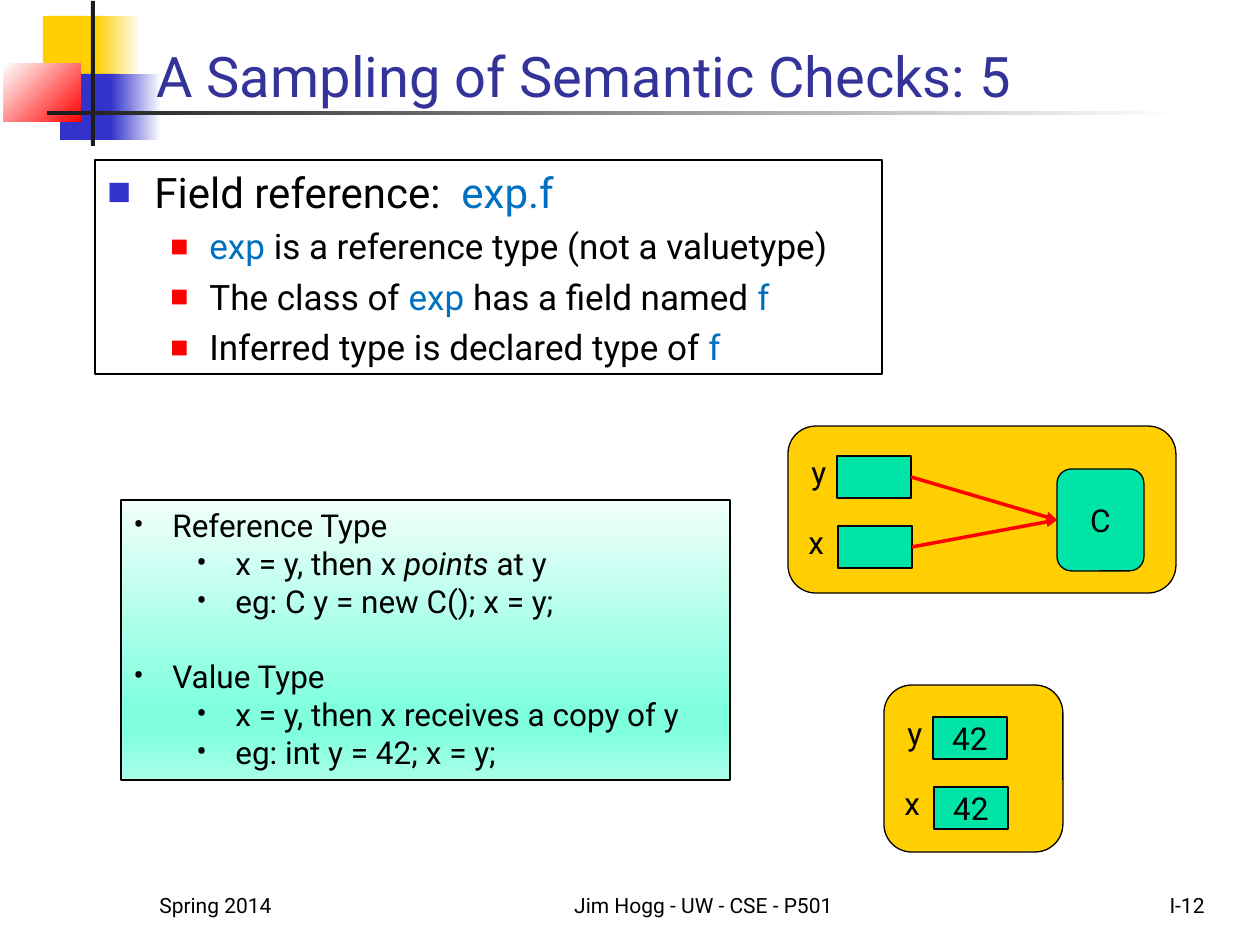
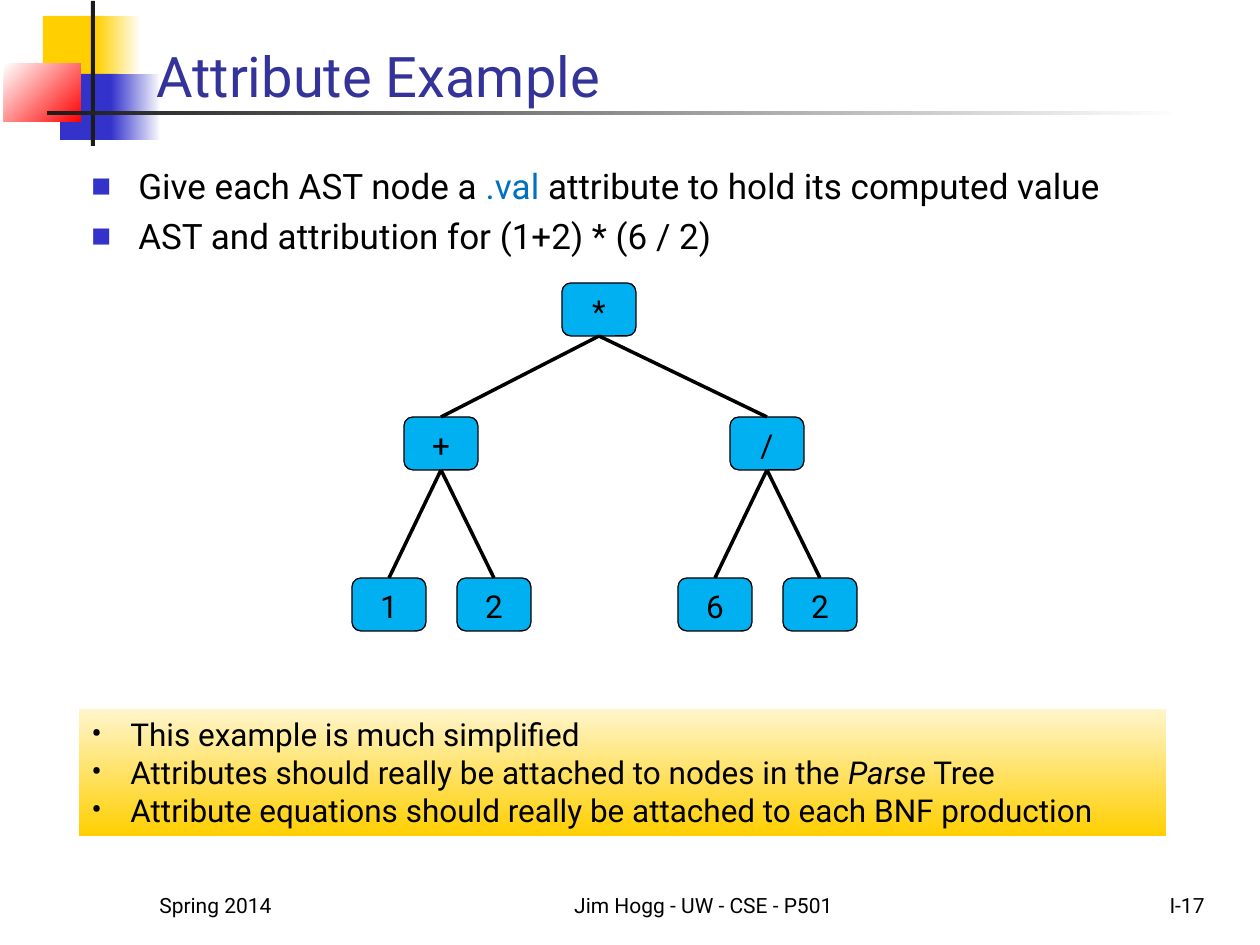
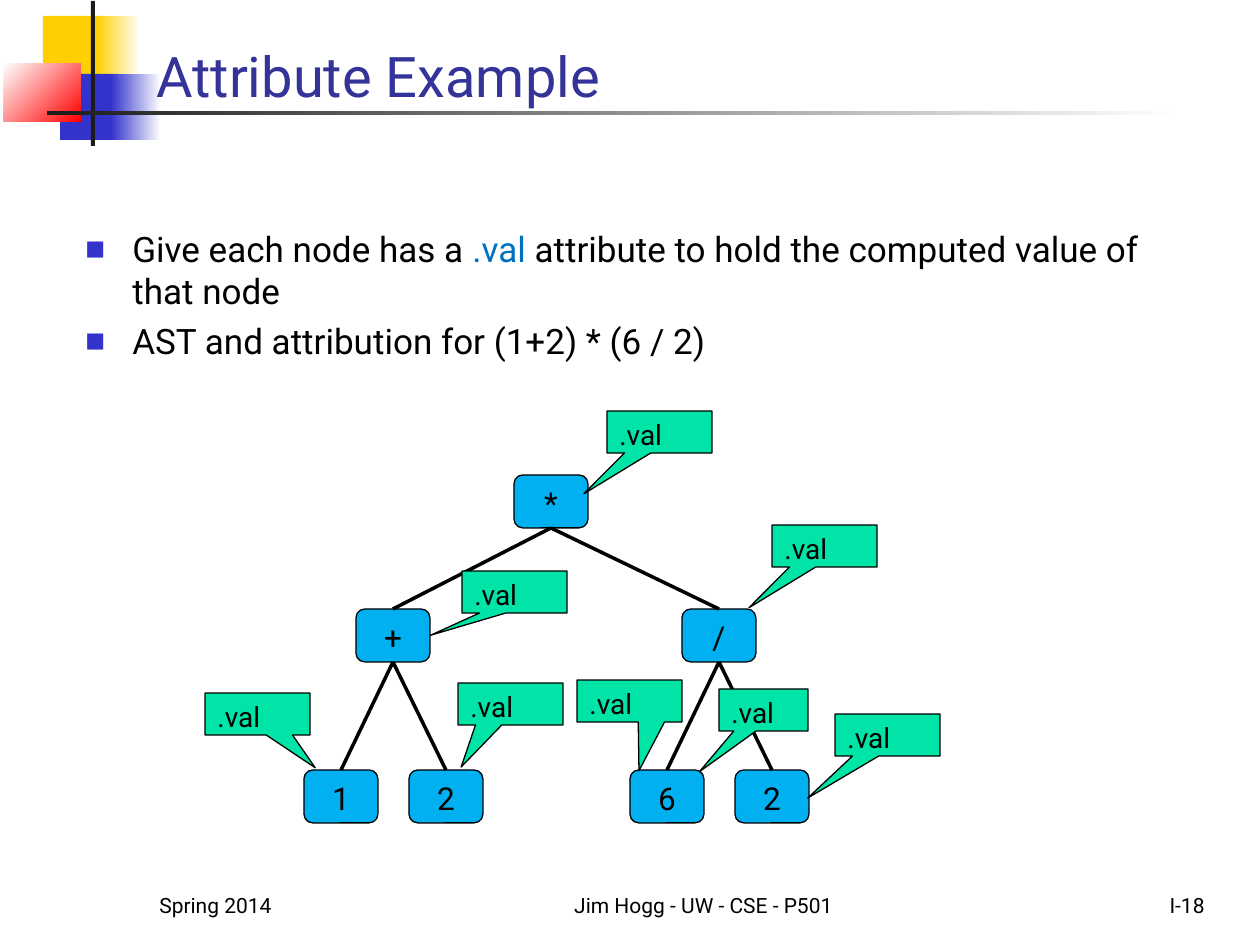
import pptx
import pptx.util
import pptx.dml.color
import pptx.enum.shapes
import pptx.enum.text
import pptx.oxml.ns
import lxml.etree

RGB = pptx.dml.color.RGBColor
BLACK = RGB(0x00, 0x00, 0x00)
WHITE = RGB(0xFF, 0xFF, 0xFF)
INK = RGB(0x1C, 0x1C, 0x1C)
GOLD = RGB(0xFF, 0xCF, 0x01)
CREAM = RGB(0xFF, 0xF5, 0xCC)
BLUE = RGB(0x33, 0x33, 0xCC)
NAVY = RGB(0x33, 0x33, 0x99)
RED = RGB(0xFF, 0x00, 0x00)
CODE = RGB(0x00, 0x70, 0xC0)
SKY = RGB(0x00, 0xB0, 0xF0)
GREEN = RGB(0x00, 0xE4, 0xA8)
PALE = RGB(0xF1, 0xFF, 0xFB)
MINT = RGB(0x80, 0xFF, 0xDE)
AQUA = RGB(0xAA, 0xFF, 0xE9)

FONT = "Roboto"
SCALE = 914400 / 126
SHAPE = pptx.enum.shapes.MSO_SHAPE
ANCHOR = pptx.enum.text.MSO_ANCHOR
ALIGN = pptx.enum.text.PP_ALIGN

BODY = [(47, 47, "■", BLUE, 60), (102, 39, "■", RED, 55)]
NOTE = [(39, 39, "•", BLACK, 100), (102, 39, "•", BLACK, 100)]


def px(count):
    return pptx.util.Emu(round(count * SCALE))


def child(parent, tag, **attrs):
    name = pptx.oxml.ns.qn("a:" + tag)
    return lxml.etree.SubElement(parent, name, {k: str(v) for k, v in attrs.items()})


class Deck:
    """Holds the shared style and the current slide."""

    def __init__(self):
        self.show = pptx.Presentation()
        self.show.slide_width, self.show.slide_height = px(1260), px(945)
        self.slide = None

    def page(self, title, number):
        self.slide = self.show.slides.add_slide(self.show.slide_layouts[6])
        self.box((43, 16, 60, 66), GOLD, None)
        self.fade((96, 16, 45, 66), [(0, GOLD), (100, WHITE)], 0)
        self.box((60, 74, 58, 66), BLUE, None)
        self.fade((111, 74, 50, 66), [(0, BLUE), (100, WHITE)], 0)
        self.fade((4, 64, 77, 58), [(0, WHITE), (100, RED)], 45)
        self.box((91, 1, 4, 145), INK, None)
        self.fade((47, 111, 1134, 4), [(0, INK), (100, WHITE)], 0)
        self.label((144, 29, 1074, 86), title, 32, NAVY, anchor=ANCHOR.BOTTOM)
        for left, width, text, align in (
            (147, 262, "Spring 2014", ALIGN.LEFT),
            (504, 399, "Jim Hogg - UW - CSE - P501", ALIGN.CENTER),
            (955, 262, number, ALIGN.RIGHT),
        ):
            self.label((left, 861, width, 63), text, 12, align=align, anchor=ANCHOR.BOTTOM)

    def box(self, area, fill, line=BLACK, kind=SHAPE.RECTANGLE):
        shape = self.slide.shapes.add_shape(kind, *map(px, area))
        shape.shadow.inherit = False
        if fill is None:
            shape.fill.background()
        else:
            shape.fill.solid()
            shape.fill.fore_color.rgb = fill
        if line is None:
            shape.line.fill.background()
        else:
            shape.line.color.rgb = line
            shape.line.width = pptx.util.Pt(0.75)
        return shape

    def fade(self, area, stops, angle, line=None):
        shape = self.box(area, WHITE, line)
        shape.fill.gradient()
        shape.fill.gradient_angle = -angle % 360
        ramp = shape._element.spPr.find(".//" + pptx.oxml.ns.qn("a:gsLst"))
        for stop in list(ramp):
            ramp.remove(stop)
        for place, color in stops:
            child(child(ramp, "gs", pos=place * 1000), "srgbClr", val=color)
        return shape

    def style(self, run, size, color=BLACK):
        run.font.name = FONT
        run.font.size = pptx.util.Pt(size)
        run.font.color.rgb = color

    def put(self, shape, text, size, color=BLACK, align=ALIGN.LEFT, anchor=ANCHOR.TOP):
        frame = shape.text_frame
        frame.word_wrap = True
        frame.vertical_anchor = anchor
        frame.text = text
        for para in frame.paragraphs:
            para.alignment = align
            for run in para.runs:
                self.style(run, size, color)
        return shape

    def label(self, area, text, size, color=BLACK, **place):
        shape = self.slide.shapes.add_textbox(*map(px, area))
        return self.put(shape, text, size, color, **place)

    def points(self, shape, items, marks, sizes, lead=0.0, accent=None):
        """Fills a shape with (level, text, gap) items; bars enclose accents."""
        frame = shape.text_frame
        frame.word_wrap = True
        frame.vertical_anchor = ANCHOR.TOP
        for index, (level, text, gap) in enumerate(items):
            para = frame.add_paragraph() if index else frame.paragraphs[0]
            size = sizes[level]
            para.alignment = ALIGN.LEFT
            para.level = level
            para.space_before = pptx.util.Pt(gap + lead * size)
            for turn, piece in enumerate(text.split("|")):
                if piece:
                    run = para.add_run()
                    run.text = piece
                    self.style(run, size, accent if turn % 2 and accent else BLACK)
                    run.font.italic = bool(turn % 2 and not accent)
            self.mark(para, *marks[level])

    def mark(self, para, left, hang, sign, color, scale):
        props = para._p.get_or_add_pPr()
        props.set("marL", str(px(left)))
        props.set("indent", str(-px(hang)))
        child(child(props, "buClr"), "srgbClr", val=color)
        child(props, "buSzPct", val=scale * 1000)
        child(props, "buFont", typeface=FONT)
        child(props, "buChar", char=sign)

    def body(self, shape, items, sizes):
        self.points(shape, items, BODY, sizes, 0.24, CODE)

    def cell(self, area, text, fill=GREEN, kind=SHAPE.RECTANGLE, anchor=ANCHOR.MIDDLE):
        shape = self.box(area, fill, kind=kind)
        return self.put(shape, text, 18, align=ALIGN.CENTER, anchor=anchor)

    def link(self, start, out, end, entry, color=BLACK, arrow=False):
        line = self.slide.shapes.add_connector(
            pptx.enum.shapes.MSO_CONNECTOR.STRAIGHT, 0, 0, 0, 0)
        line.begin_connect(start, out)
        line.end_connect(end, entry)
        line.line.color.rgb = color
        line.line.width = pptx.util.Pt(2)
        if arrow:
            child(line.line._get_or_add_ln(), "tailEnd", type="triangle")
        child(line._element.spPr, "effectLst")

    def pair(self, left, top, text):
        """Draws the y and x cells of a memory panel and returns them."""
        cells = []
        for row, name in enumerate("yx"):
            y = top + 70 * row
            cells.append(self.cell((left + row, y, 74, 42), text))
            self.label((left - 38 - 3 * row, y - 9, 42, 50), name, 18)
        return cells

    def node(self, x, y, text):
        return self.cell((x, y, 74, 53), text, SKY, SHAPE.ROUNDED_RECTANGLE, ANCHOR.TOP)

    def tree(self, x, y):
        """Draws the syntax tree with its root node at x, y."""
        root = self.node(x, y, "*")
        for shift, sign, leaves in ((-158, "+", "12"), (168, "/", "62")):
            knot = self.node(x + shift, y + 134, sign)
            self.link(root, 2, knot, 0)
            for step, text in zip((-52, 53), leaves):
                leaf = self.node(x + shift + step, y + 295, text)
                self.link(knot, 2, leaf, 0)

    def flag(self, x, y, width, *tip):
        shape = self.box((x, y, width, 42), GREEN, kind=SHAPE.RECTANGULAR_CALLOUT)
        for index, value in enumerate(tip):
            shape.adjustments[index] = value
        self.put(shape, ".val", 16)


def checks(deck):
    deck.page("A Sampling of Semantic Checks: 5", "I-12")
    deck.body(deck.box((95, 160, 787, 214), None), [
        (0, "Field reference:  |exp.f", 0),
        (1, "|exp |is a reference type (not a valuetype)", 0),
        (1, "The class of |exp |has a field named |f", 0),
        (1, "Inferred type is declared type of |f", 0),
    ], (24, 20))
    panel = deck.fade((121, 500, 609, 280),
                      [(0, PALE), (74, MINT), (83, MINT), (100, AQUA)], 90, BLACK)
    deck.points(panel, [
        (0, "Reference Type", 0),
        (1, "x = y, then x |points |at y", 0),
        (1, "eg: C y = new C(); x = y;", 0),
        (0, "Value Type", 21.5),
        (1, "x = y, then x receives a copy of y", 0),
        (1, "eg: int y = 42; x = y;", 0),
    ], NOTE, (18, 18))
    for area in ((788, 426, 388, 167), (884, 685, 179, 167)):
        deck.box(area, GOLD, kind=SHAPE.ROUNDED_RECTANGLE)
    target = deck.cell((1057, 469, 87, 102), "C", kind=SHAPE.ROUNDED_RECTANGLE)
    for cell in deck.pair(837, 456, ""):
        deck.link(cell, 3, target, 1, RED, True)
    deck.pair(933, 717, "42")


def sample(deck):
    deck.page("Attribute Example", "I-17")
    deck.body(deck.label((79, 158, 1134, 117), "", 20), [
        (0, "Give each AST node a |.val| attribute to hold its computed value", 0),
        (0, "AST and attribution for (1+2) * (6 / 2)", 0),
    ], (20,))
    deck.tree(562, 283)
    deck.points(deck.fade((79, 709, 1087, 127), [(0, CREAM), (100, GOLD)], 90), [
        (0, "This example is much simplified", 0),
        (0, "Attributes should really be attached to nodes in the |Parse| Tree", 0),
        (0, "Attribute equations should really be attached to each BNF production", 0),
    ], NOTE, (18,))


def values(deck):
    deck.page("Attribute Example", "I-18")
    deck.body(deck.label((73, 221, 1134, 152), "", 20), [
        (0, "Give each node has a |.val| attribute to hold the computed value of that node", 0),
        (0, "AST and attribution for (1+2) * (6 / 2)", 0),
    ], (20,))
    deck.tree(514, 475)
    for spot in (
        (835, 714, 105, -0.76, 1.5),
        (772, 525, 105, -0.72, 1.47),
        (458, 683, 105, -0.47, 1.5),
        (607, 411, 105, -0.72, 1.47),
        (719, 689, 89, -0.72, 1.47),
        (462, 571, 105, -0.8, 1.03),
        (205, 693, 105, 0.55, 1.28),
        (577, 680, 105, 0.09, 1.66),
    ):
        deck.flag(*spot)


def main():
    deck = Deck()
    checks(deck)
    sample(deck)
    values(deck)
    deck.show.save("out.pptx")


if __name__ == "__main__":
    main()
